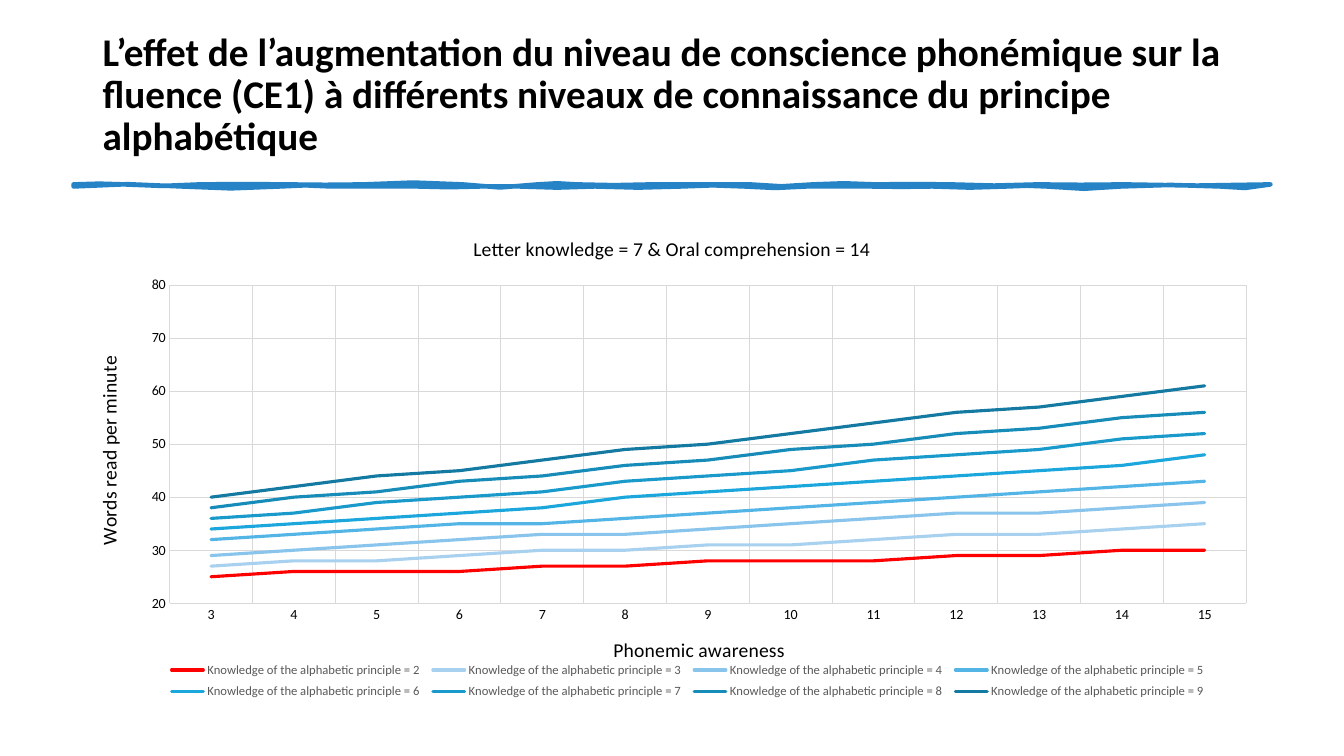
import pptx
import pptx.chart.data
import pptx.dml.color
import pptx.enum.chart
import pptx.enum.text
import pptx.oxml
import pptx.oxml.ns
import pptx.util
from lxml import etree

RGB = pptx.dml.color.RGBColor
BLACK = RGB(0x00, 0x00, 0x00)
BLUE = RGB(0x26, 0x83, 0xC6)
GRID = RGB(0xD9, 0xD9, 0xD9)
GREY = RGB(0x59, 0x59, 0x59)
SHADES = [
    RGB(0xFF, 0x00, 0x00), RGB(0xA8, 0xD1, 0xEF), RGB(0x88, 0xC4, 0xEB),
    RGB(0x53, 0xB4, 0xE6), RGB(0x1B, 0xA7, 0xDC), RGB(0x19, 0x9A, 0xCA),
    RGB(0x17, 0x8C, 0xB8), RGB(0x14, 0x7A, 0xA1),
]

TITLE = ("L’effet de l’augmentation du niveau de conscience phonémique sur la "
         "fluence (CE1) à différents niveaux de connaissance du principe alphabétique")
WORDS = [
    [25, 26, 26, 26, 27, 27, 28, 28, 28, 29, 29, 30, 30],
    [27, 28, 28, 29, 30, 30, 31, 31, 32, 33, 33, 34, 35],
    [29, 30, 31, 32, 33, 33, 34, 35, 36, 37, 37, 38, 39],
    [32, 33, 34, 35, 35, 36, 37, 38, 39, 40, 41, 42, 43],
    [34, 35, 36, 37, 38, 40, 41, 42, 43, 44, 45, 46, 48],
    [36, 37, 39, 40, 41, 43, 44, 45, 47, 48, 49, 51, 52],
    [38, 40, 41, 43, 44, 46, 47, 49, 50, 52, 53, 55, 56],
    [40, 42, 44, 45, 47, 49, 50, 52, 54, 56, 57, 59, 61],
]

# Each wave: end in inches, then the two bends in hundredths of an inch
TOP = [
    (1.24, -2, 0), (1.98, 1, 3), (2.84, -2, 1), (3.61, 0, 1), (4.59, -1, -4),
    (5.33, 5, 3), (5.72, -2, -1), (6.46, 2, 0), (7.44, 1, -1), (8.06, 2, 3),
    (8.68, -2, -1), (9.43, 2, -3), (10.29, 4, -1), (11.15, 2, -1), (12.6, 2, 1),
]
BASE = [
    (12.1, 2, 2), (11.12, -1, -3), (10.38, 4, 2), (9.99, -1, -1), (9.25, 2, 1),
    (8.63, 0, 1), (8, 0, 0), (7.38, 1, 3), (6.76, -2, -1), (5.9, 2, 1),
    (5.15, 0, 3), (4.77, -2, 2), (4.14, -1, 3), (3.28, -2, 2), (2.78, -2, -1),
    (1.8, 2, 3), (0.73, -3, -3),
]


def ripple(start, y, waves, steps=2):
    """Points along a chain of cubic waves that all rest on height y."""
    for end, one, two in waves:
        for i in range(1, steps + 1):
            t = i / steps
            swing = 3 * t * (1 - t) * ((1 - t) * one + t * two) / 100
            yield start + (end - start) * t, y + swing
        start = end


def pin(node, at, **sides):
    """Give a chart part a fixed place, in hundredths of the chart."""
    for old in node.xpath("c:layout"):
        node.remove(old)
    qn = pptx.oxml.ns.qn
    layout = etree.Element(qn("c:layout"))
    manual = etree.SubElement(layout, qn("c:manualLayout"))
    if node.tag == qn("c:plotArea"):
        etree.SubElement(manual, qn("c:layoutTarget")).set("val", "inner")
    for side in ("x", "y"):
        etree.SubElement(manual, qn(f"c:{side}Mode")).set("val", "edge")
    for side, share in sides.items():
        etree.SubElement(manual, qn(f"c:{side}")).set("val", f"{share / 100:.3f}")
    node.insert(at, layout)


class Deck:
    """Style and current slide; places are on a grid of 100 by 100."""

    font = "Calibri"

    def __init__(self):
        self.show = pptx.Presentation()
        self.show.slide_width = pptx.util.Inches(13.33)
        self.show.slide_height = pptx.util.Inches(7.5)
        self.slide = self.show.slides.add_slide(self.show.slide_layouts[6])

    def box(self, col, row, cols, rows):
        wide, high = self.show.slide_width, self.show.slide_height
        return [round(n * full / 100) for n, full in
                ((col, wide), (row, high), (cols, wide), (rows, high))]

    def style(self, font, size, color=BLACK, bold=False):
        font.name, font.size, font.bold = self.font, pptx.util.Pt(size), bold
        font.color.rgb = color

    def head(self, text, *place):
        frame = self.slide.shapes.add_textbox(*self.box(*place)).text_frame
        frame.word_wrap = True
        frame.vertical_anchor = pptx.enum.text.MSO_ANCHOR.MIDDLE
        frame.text = text
        frame.paragraphs[0].line_spacing = 0.9
        self.style(frame.paragraphs[0].runs[0].font, 28, bold=True)

    def stroke(self, left, top, base):
        right = top[-1][0]
        dots = [*ripple(left, 1.83, top), *ripple(right, 1.85, base)]
        inch = pptx.util.Inches
        pen = self.slide.shapes.build_freeform(inch(left), inch(1.83))
        pen.add_line_segments([(inch(x), inch(y)) for x, y in dots])
        shape = pen.convert_to_shape()
        shape.shadow.inherit = False
        shape.fill.solid()
        shape.fill.fore_color.rgb = BLUE
        shape.line.color.rgb = BLUE
        shape.line.width = pptx.util.Pt(3.25)

    def label(self, title, text, x, y):
        title.text_frame.text = text
        self.style(title.text_frame.paragraphs[0].runs[0].font, 14)
        pin(title.element, 1, x=x, y=y)

    def rule(self, line):
        line.color.rgb = GRID
        line.width = pptx.util.Pt(0.75)

    def axis(self, axis, text, x, y):
        none = pptx.enum.chart.XL_TICK_MARK.NONE
        axis.major_tick_mark = axis.minor_tick_mark = none
        axis.has_major_gridlines = True
        self.rule(axis.major_gridlines.format.line)
        self.style(axis.tick_labels.font, 10)
        self.label(axis.axis_title, text, x, y)

    def lines(self, *place):
        data = pptx.chart.data.CategoryChartData()
        data.categories = [str(n) for n in range(3, 16)]
        for level, row in enumerate(WORDS, 2):
            data.add_series(f"Knowledge of the alphabetic principle = {level}", row)
        kind = pptx.enum.chart.XL_CHART_TYPE.LINE
        chart = self.slide.shapes.add_chart(kind, *self.box(*place), data).chart
        self.style(chart.font, 10)
        self.label(chart.chart_title, "Letter knowledge = 7 & Oral comprehension = 14",
                   33.1, 3)
        self.axis(chart.category_axis, "Phonemic awareness", 44.8, 83.3)
        self.rule(chart.category_axis.format.line)
        scale = chart.value_axis
        self.axis(scale, "Words read per minute", 1.5, 27.2)
        scale.minimum_scale, scale.maximum_scale, scale.major_unit = 20, 80, 10
        scale.format.line.fill.background()
        chart.plots[0].vary_by_categories = False
        for series, shade in zip(chart.plots[0].series, SHADES):
            series.smooth = False
            series.format.line.color.rgb = shade
            series.format.line.width = pptx.util.Pt(2.25)
        chart.has_legend = True
        chart.legend.position = pptx.enum.chart.XL_LEGEND_POSITION.BOTTOM
        chart.legend.include_in_layout = False
        self.style(chart.legend.font, 9, GREY)
        root = chart.element
        for line in root.xpath(".//c:ser/c:spPr/a:ln"):
            line.set("cap", "rnd")
        pin(root.xpath(".//c:legend")[0], 1, x=7.4, y=88, w=87.8, h=10)
        pin(root.xpath(".//c:plotArea")[0], 0, x=8, y=13.7, w=90, h=63.8)


def main():
    deck = Deck()
    deck.head(TITLE, 6.9, 5.33, 86.27, 14.67)
    deck.stroke(0.73, TOP, BASE)
    deck.lines(5.5, 28.67, 89, 66)
    deck.show.save("out.pptx")


if __name__ == "__main__":
    main()
